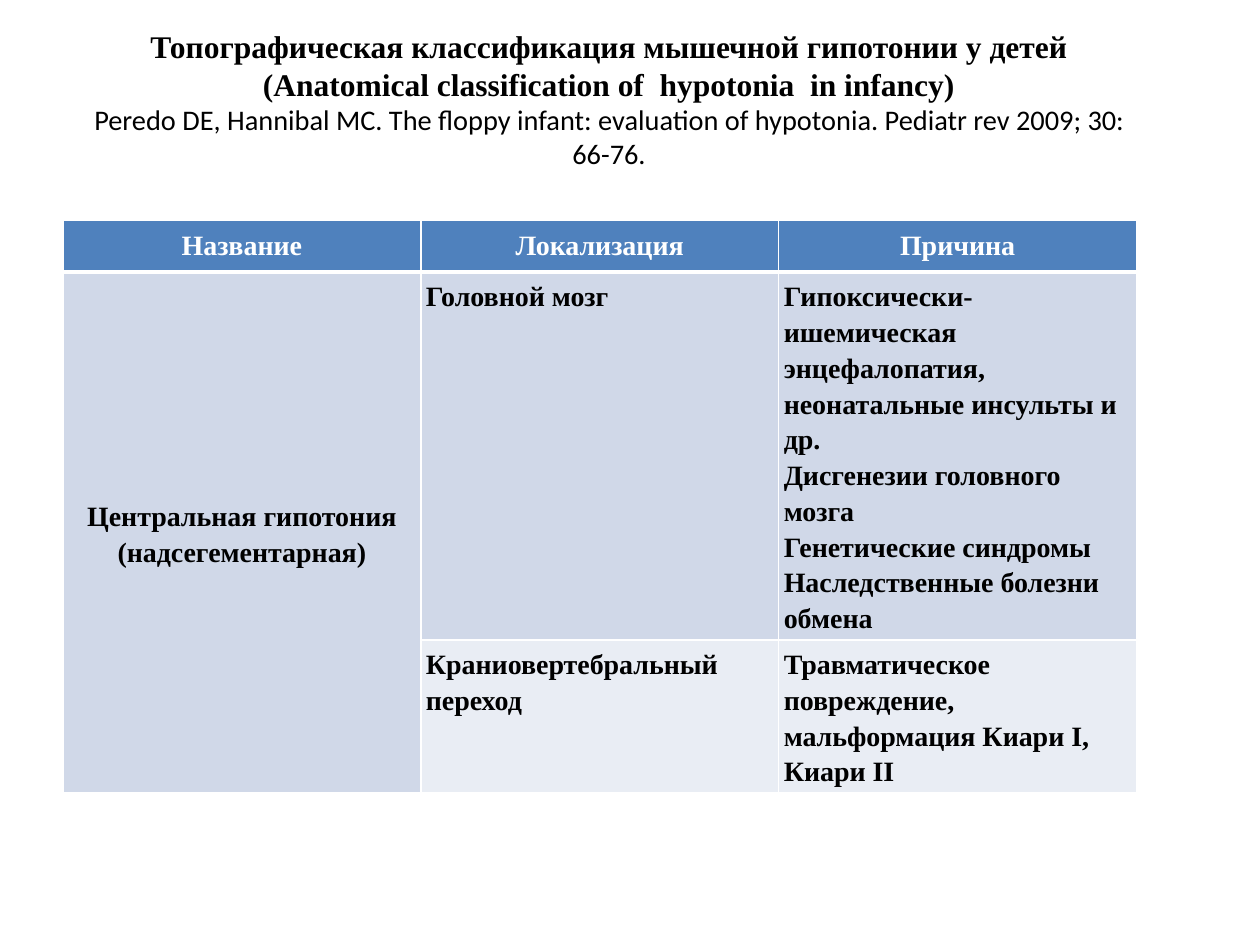
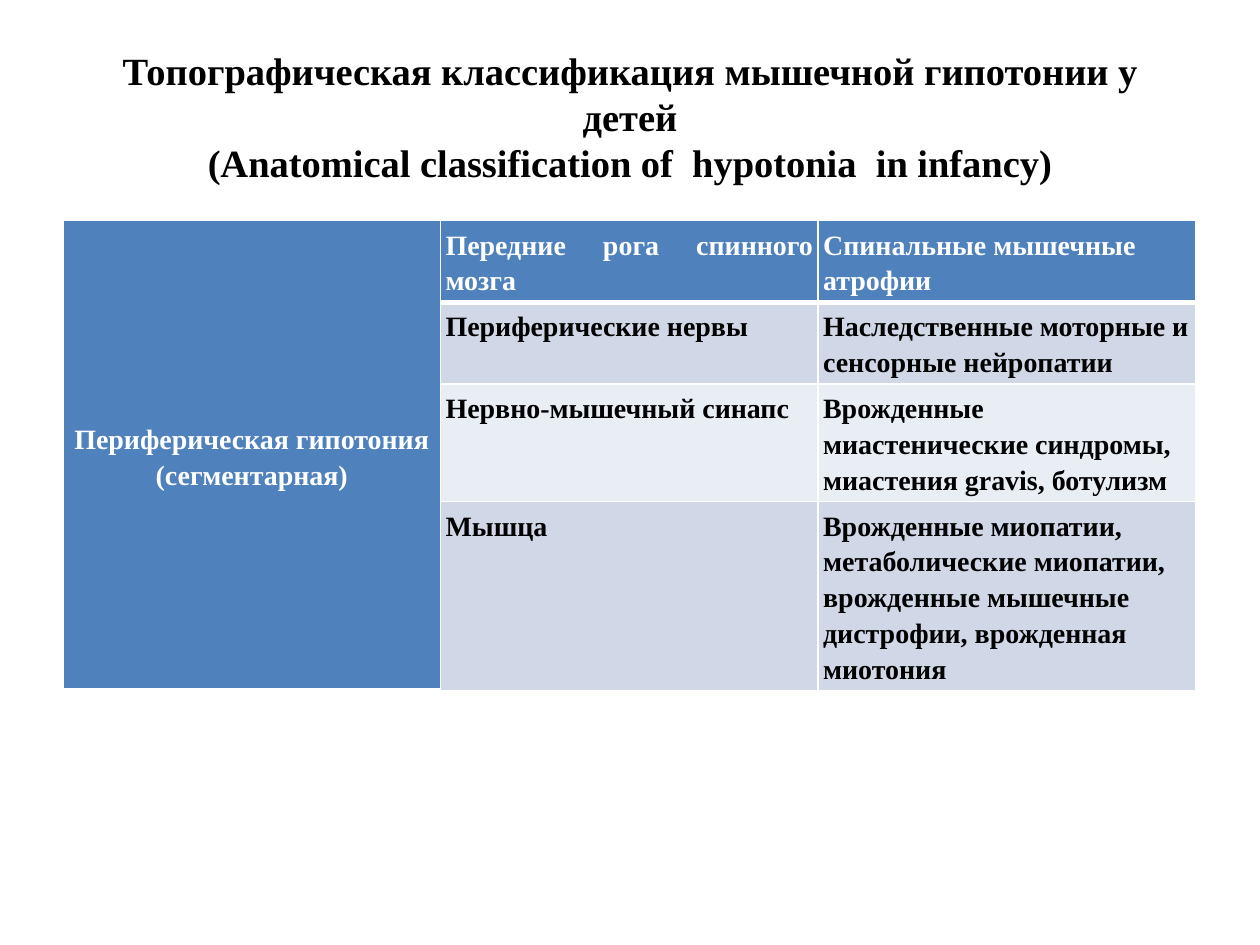
"""Builds two slides that classify muscle hypotonia in infants by anatomical level."""
from dataclasses import dataclass

from lxml.etree import SubElement
from pptx import Presentation
from pptx.dml.color import RGBColor as Color
from pptx.enum.text import MSO_ANCHOR as Anchor, MSO_AUTO_SIZE as AutoSize, PP_ALIGN as Align
from pptx.oxml.ns import qn
from pptx.util import Pt

HEADING = [
    "Топографическая классификация мышечной гипотонии у детей",
    "(Anatomical classification of  hypotonia  in infancy)",
]
CITATION = "Peredo DE, Hannibal MC. The floppy infant: evaluation of hypotonia. Pediatr rev 2009; 30: 66-76."

SLIDES = [
    {
        "heading_size": 18,
        "citation": CITATION,
        "title_width": 624,
        "title_bottom_inset": 23.4,
        "column_width": 204.5,
        "row_heights": [29.5, 209, 87],
        "type_row": 1,
        "rows": [
            (["Название"], ["Локализация"], ["Причина"]),
            (
                ["Центральная гипотония (надсегементарная)"],
                ["Головной мозг"],
                [
                    "Гипоксически-ишемическая энцефалопатия, неонатальные инсульты и др.",
                    "Дисгенезии головного мозга",
                    "Генетические синдромы",
                    "Наследственные болезни обмена",
                ],
            ),
            (
                [],
                ["Краниовертебральный переход"],
                ["Травматическое повреждение, мальформация Киари I, Киари II"],
            ),
        ],
    },
    {
        "heading_size": 22,
        "citation": None,
        "title_width": 648,
        "title_bottom_inset": 3.6,
        "column_width": 215.75,
        "row_heights": [46, 46, 67, 107],
        "type_row": 0,
        "rows": [
            (
                ["Периферическая гипотония", "(сегментарная)"],
                ["Передние рога спинного мозга"],
                ["Спинальные мышечные атрофии"],
            ),
            ([], ["Периферические нервы"], ["Наследственные моторные и сенсорные нейропатии"]),
            (
                [],
                ["Нервно-мышечный синапс"],
                ["Врожденные миастенические синдромы, миастения gravis, ботулизм"],
            ),
            (
                [],
                ["Мышца"],
                ["Врожденные миопатии, метаболические миопатии, врожденные мышечные дистрофии, врожденная миотония"],
            ),
        ],
    },
]


@dataclass(frozen=True)
class Theme:
    black: str = "000000"
    white: str = "FFFFFF"
    header: str = "4F81BD"
    bands: tuple = ("D0D8E8", "E9EDF4")
    serif: str = "Times New Roman"
    sans: str = "Calibri"
    table_size: float = 16
    citation_size: float = 16.2
    line_spacing: float = 1.15
    cell_inset: float = 2.9
    border: float = 1
    header_border: float = 3


THEME = Theme()
LEFT, TITLE_TOP, TITLE_HEIGHT, TABLE_TOP = 36, 21.6, 89.5, 126


def add_run(paragraph, text, size, font_name=THEME.serif, color=THEME.black, bold=True):
    run = paragraph.add_run()
    run.text = text
    run.font.name = font_name
    run.font.size = Pt(size)
    run.font.bold = bold
    run.font.color.rgb = Color.from_string(color)


def add_title(slide, content):
    shape = slide.shapes.add_textbox(
        Pt(LEFT), Pt(TITLE_TOP), Pt(content["title_width"]), Pt(TITLE_HEIGHT))
    frame = shape.text_frame
    frame.word_wrap = True
    frame.auto_size = AutoSize.NONE
    frame.vertical_anchor = Anchor.MIDDLE
    frame.margin_bottom = Pt(content["title_bottom_inset"])
    paragraph = frame.paragraphs[0]
    paragraph.alignment = Align.CENTER
    for index, line in enumerate(HEADING):
        if index:
            paragraph.add_line_break()
        add_run(paragraph, line, content["heading_size"])
    if content["citation"]:
        paragraph.add_line_break()
        add_run(paragraph, content["citation"], THEME.citation_size, THEME.sans, bold=False)


def add_borders(cell, bottom_width):
    properties = cell._tc.get_or_add_tcPr()
    widths = {"a:lnL": THEME.border, "a:lnR": THEME.border,
              "a:lnT": THEME.border, "a:lnB": bottom_width}
    for tag, width in widths.items():
        line = SubElement(properties, qn(tag), w=str(Pt(width)))
        fill = SubElement(line, qn("a:solidFill"))
        SubElement(fill, qn("a:srgbClr"), val=THEME.white)


def fill_cell(cell, texts, is_header, color, alignment):
    if not cell.is_spanned:
        add_borders(cell, THEME.header_border if is_header else THEME.border)
    cell.fill.solid()
    cell.fill.fore_color.rgb = Color.from_string(color)
    cell.margin_left = cell.margin_right = Pt(THEME.cell_inset)
    cell.margin_top = cell.margin_bottom = Pt(THEME.cell_inset)
    cell.vertical_anchor = Anchor.MIDDLE if cell.is_merge_origin else Anchor.TOP
    frame = cell.text_frame
    for index, text in enumerate(texts):
        paragraph = frame.add_paragraph() if index else frame.paragraphs[0]
        paragraph.alignment = alignment
        paragraph.line_spacing = THEME.line_spacing
        add_run(paragraph, text, THEME.table_size,
                color=THEME.white if is_header else THEME.black)


def add_classification(slide, content):
    rows, heights = content["rows"], content["row_heights"]
    column_count = len(rows[0])
    table = slide.shapes.add_table(
        len(rows), column_count, Pt(LEFT), Pt(TABLE_TOP),
        Pt(content["column_width"] * column_count), Pt(sum(heights))).table
    for column in table.columns:
        column.width = Pt(content["column_width"])
    for row, height in zip(table.rows, heights):
        row.height = Pt(height)
    type_row = content["type_row"]
    table.cell(type_row, 0).merge(table.cell(len(rows) - 1, 0))
    for row_index, row in enumerate(rows):
        for column_index, texts in enumerate(row):
            source_row = row_index if column_index else min(row_index, type_row)
            is_header = source_row == 0
            color = THEME.header if is_header else THEME.bands[(source_row - 1) % 2]
            if column_index == 0 or row_index < type_row:
                alignment = Align.CENTER
            else:
                alignment = Align.JUSTIFY if column_index == 1 else Align.LEFT
            fill_cell(table.cell(row_index, column_index), texts, is_header, color, alignment)


def main():
    presentation = Presentation()
    presentation.slide_width, presentation.slide_height = Pt(720), Pt(540)
    for content in SLIDES:
        slide = presentation.slides.add_slide(presentation.slide_layouts[6])
        add_title(slide, content)
        add_classification(slide, content)
    presentation.save("out.pptx")


if __name__ == "__main__":
    main()
